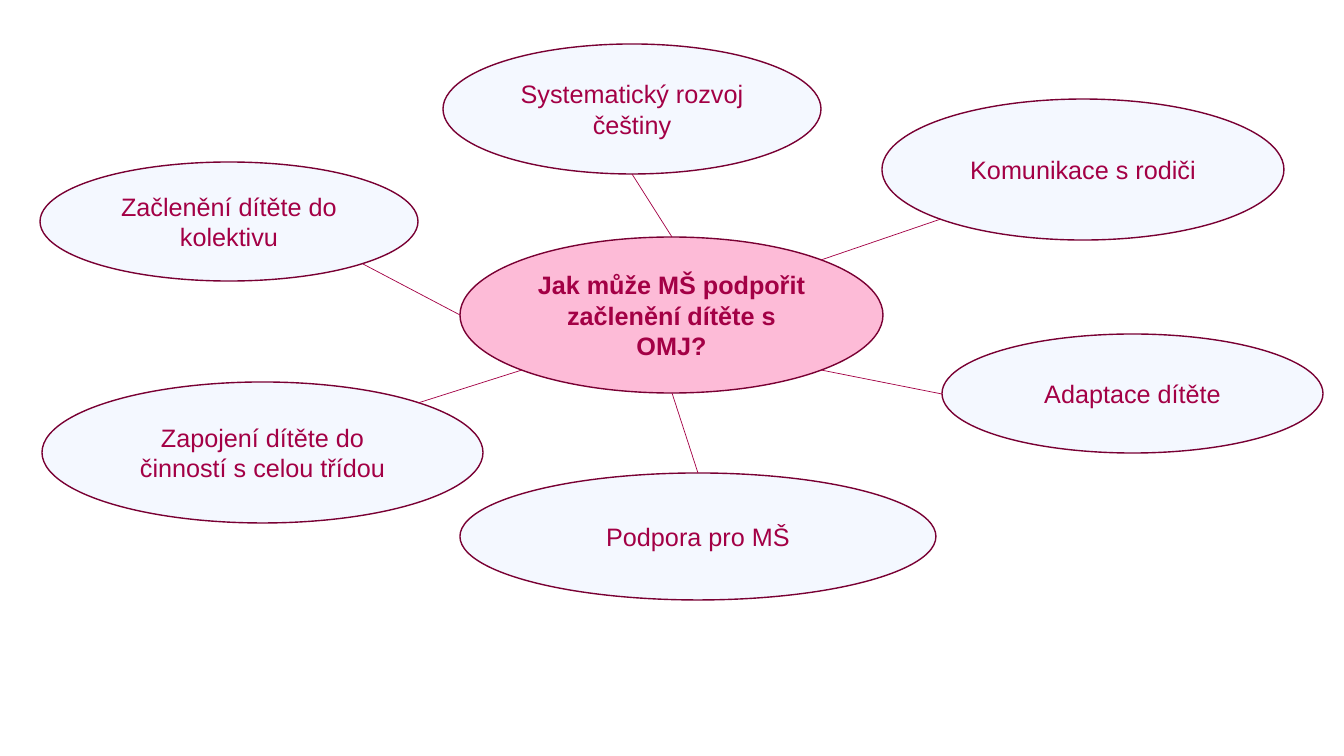
"""Build a mind map slide: a central question with six linked answers."""
from dataclasses import dataclass
from math import hypot

from lxml import etree
from pptx import Presentation
from pptx import util as u
from pptx.dml.color import RGBColor
from pptx.enum import shapes, text
from pptx.oxml.ns import qn
from pptx.slide import Slide

EMU_PER_PX = 914400 / 100.8
COLOURS = {"answer": "F4F8FF", "question": "FDBBD7", "outline": "790033", "ink": "A30045"}

TOP, BOTTOM, LEFT, RIGHT = (0, -1), (0, 1), (-1, 0), (1, 0)
TOP_RIGHT, BOTTOM_RIGHT, BOTTOM_LEFT = (1, -1), (1, 1), (-1, 1)


@dataclass(frozen=True)
class Bubble:
    label: str
    left: int
    top: int
    width: int
    height: int

    def site(self, direction: tuple[int, int]) -> tuple[int, int]:
        across, down = direction
        reach = 2 * hypot(across, down)
        return (round(self.left + self.width * (0.5 + across / reach)),
                round(self.top + self.height * (0.5 + down / reach)))


@dataclass(frozen=True)
class Branch:
    answer: Bubble
    question_side: tuple[int, int]
    answer_side: tuple[int, int]


QUESTION = Bubble("Jak může MŠ podpořit začlenění dítěte s OMJ?", 460, 237, 423, 156)
BRANCHES = [
    Branch(Bubble("Adaptace dítěte", 942, 334, 381, 119), BOTTOM_RIGHT, LEFT),
    Branch(Bubble("Systematický rozvoj češtiny", 443, 44, 378, 130), TOP, BOTTOM),
    Branch(Bubble("Zapojení dítěte do činností s celou třídou", 42, 382, 441, 141),
           BOTTOM_LEFT, TOP_RIGHT),
    Branch(Bubble("Komunikace s rodiči", 882, 99, 402, 141), TOP_RIGHT, BOTTOM_LEFT),
    Branch(Bubble("Podpora pro MŠ", 460, 473, 476, 127), BOTTOM, TOP),
    Branch(Bubble("Začlenění dítěte do kolektivu", 40, 162, 378, 119), LEFT, BOTTOM_RIGHT),
]


def px(length: int) -> u.Emu:
    return u.Emu(round(length * EMU_PER_PX))


def colour(name: str) -> RGBColor:
    return RGBColor.from_string(COLOURS[name])


def draw_bubble(page: Slide, bubble: Bubble, fill: str, bold: bool = False) -> None:
    oval = page.shapes.add_shape(shapes.MSO_SHAPE.OVAL, px(bubble.left), px(bubble.top),
                                 px(bubble.width), px(bubble.height))
    oval.shadow.inherit = False
    oval.fill.solid()
    oval.fill.fore_color.rgb = colour(fill)
    oval.line.color.rgb = colour("outline")
    oval.line.width = u.Pt(1)
    frame = oval.text_frame
    frame.word_wrap = True
    frame.vertical_anchor = text.MSO_ANCHOR.MIDDLE
    para = frame.paragraphs[0]
    para.text = bubble.label
    para.alignment = text.PP_ALIGN.CENTER
    para.font.name = "Arial"
    para.font.size = u.Pt(18)
    para.font.bold = bold
    para.font.color.rgb = colour("ink")


def draw_link(page: Slide, branch: Branch) -> None:
    start = QUESTION.site(branch.question_side)
    end = branch.answer.site(branch.answer_side)
    link = page.shapes.add_connector(shapes.MSO_CONNECTOR.STRAIGHT,
                                     *(px(length) for length in start + end))
    link.line.color.rgb = colour("ink")
    link.line.width = u.Pt(0.5)
    etree.SubElement(link._element.spPr, qn("a:effectLst"))


def main() -> None:
    deck = Presentation()
    deck.slide_width, deck.slide_height = px(1344), px(756)
    page = deck.slides.add_slide(deck.slide_layouts.get_by_name("Blank"))
    for branch in BRANCHES:
        draw_bubble(page, branch.answer, "answer")
    draw_bubble(page, QUESTION, "question", bold=True)
    for branch in BRANCHES:
        draw_link(page, branch)
    deck.save("out.pptx")


if __name__ == "__main__":
    main()
